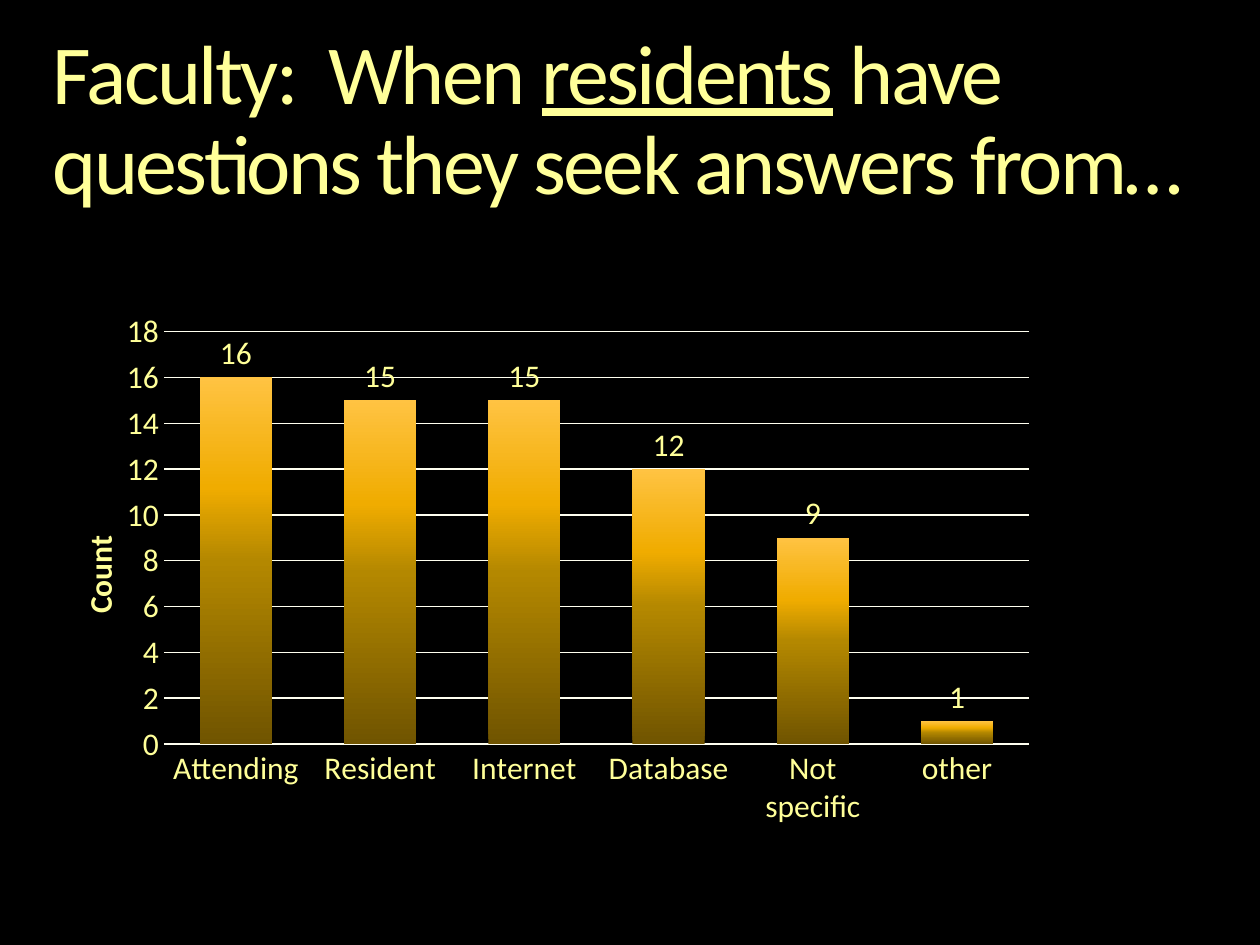
from lxml import etree
from pptx import Presentation
from pptx import util as u
from pptx.chart.data import CategoryChartData
from pptx.dml.color import RGBColor
from pptx.enum import chart as ch
from pptx.enum import text
from pptx.oxml import parse_xml
from pptx.oxml.ns import nsdecls, qn

FONT, CREAM, LINE = "Calibri", "FFFF99", "FFFFF0"
TITLE = [("Faculty:  When ", False), ("residents", True),
         (" have questions they seek answers from…", False)]
COUNTS = {"Attending": 16, "Resident": 15, "Internet": 15,
          "Database": 12, "Not specific": 9, "other": 1}
BAR_STOPS = [(0, "705400"), (50, "B48800"), (70, "F0AC00"), (100, "FFC342")]
PLOT_LAYOUT = {"x": 0.13, "y": 0.05, "w": 0.85, "h": 0.77}
AXIS_TITLE_LAYOUT = {"x": 0.04, "y": 0.42}


def rgb(value):
    return RGBColor.from_string(value)


def style(font, size, bold=False):
    font.name, font.size, font.bold = FONT, u.Pt(size), bold
    font.color.rgb = rgb(CREAM)


def rule(line):
    line.color.rgb = rgb(LINE)
    line.width = u.Pt(0.75)


def set_layout(parent, position, inner=False):
    """Place a chart part by fractions of the chart's size."""
    for old in parent.findall(qn("c:layout")):
        parent.remove(old)
    layout = parse_xml(f"<c:layout {nsdecls('c')}><c:manualLayout/></c:layout>")
    fields = [("layoutTarget", "inner")] if inner else []
    fields += [(f"{key}Mode", "edge") for key in "xy"] + list(position.items())
    for tag, value in fields:
        etree.SubElement(layout[0], qn(f"c:{tag}")).set("val", str(value))
    tx = parent.find(qn("c:tx"))
    parent.insert(0 if tx is None else 1, layout)


def add_title(s):
    sp = s.shapes.add_textbox(u.Inches(0.42), u.Inches(0.25), u.Inches(9.17), u.Inches(1.45))
    tf = sp.text_frame
    tf.word_wrap = True
    tf.vertical_anchor = text.MSO_ANCHOR.TOP
    tf.margin_left = tf.margin_right = tf.margin_top = tf.margin_bottom = 0
    p = tf.paragraphs[0]
    p.line_spacing = 0.9
    for words, underlined in TITLE:
        r = p.add_run()
        r.text = words
        style(r.font, 48)
        r.font.underline = underlined
        r.font._element.set("spc", "-150")


def add_count_chart(s):
    data = CategoryChartData()
    data.categories = list(COUNTS)
    data.add_series("Series 1", list(COUNTS.values()))
    chart = s.shapes.add_chart(
        ch.XL_CHART_TYPE.COLUMN_CLUSTERED, u.Inches(0.25), u.Inches(2.42),
        u.Inches(8.08), u.Inches(4.25), data).chart
    chart.has_legend = chart.has_title = False
    style(chart.font, 18)

    for axis in (chart.category_axis, chart.value_axis):
        axis.major_tick_mark = axis.minor_tick_mark = ch.XL_TICK_MARK.NONE
        style(axis.tick_labels.font, 18)
    rule(chart.category_axis.format.line)
    counts = chart.value_axis
    counts.minimum_scale, counts.maximum_scale, counts.major_unit = 0, 18, 2
    counts.format.line.fill.background()
    rule(counts.major_gridlines.format.line)
    counts.axis_title.text_frame.text = "Count"
    style(counts.axis_title.text_frame.paragraphs[0].runs[0].font, 18, bold=True)
    set_layout(counts.axis_title._element, AXIS_TITLE_LAYOUT)

    plot = chart.plots[0]
    plot.gap_width, plot.overlap, plot.vary_by_categories = 100, -24, False
    plot.has_data_labels = True
    labels = plot.data_labels
    labels.show_value = True
    labels.position = ch.XL_LABEL_POSITION.OUTSIDE_END
    style(labels.font, 18)

    bars = plot.series[0]
    bars.format.fill.gradient()
    bars.format.fill.gradient_angle = 90
    stops = bars._element.find(".//" + qn("a:gsLst"))
    for old in list(stops):
        stops.remove(old)
    for percent, color in BAR_STOPS:
        stop = etree.SubElement(stops, qn("a:gs"), pos=str(percent * 1000))
        etree.SubElement(stop, qn("a:srgbClr"), val=color)
    set_layout(chart._chartSpace.find(".//" + qn("c:plotArea")), PLOT_LAYOUT, inner=True)


def main():
    prs = Presentation()
    prs.slide_width, prs.slide_height = u.Inches(10), u.Inches(7.5)
    s = prs.slides.add_slide(prs.slide_layouts[6])
    s.background.fill.solid()
    s.background.fill.fore_color.rgb = rgb("000000")
    add_title(s)
    add_count_chart(s)
    prs.save("out.pptx")


if __name__ == "__main__":
    main()
